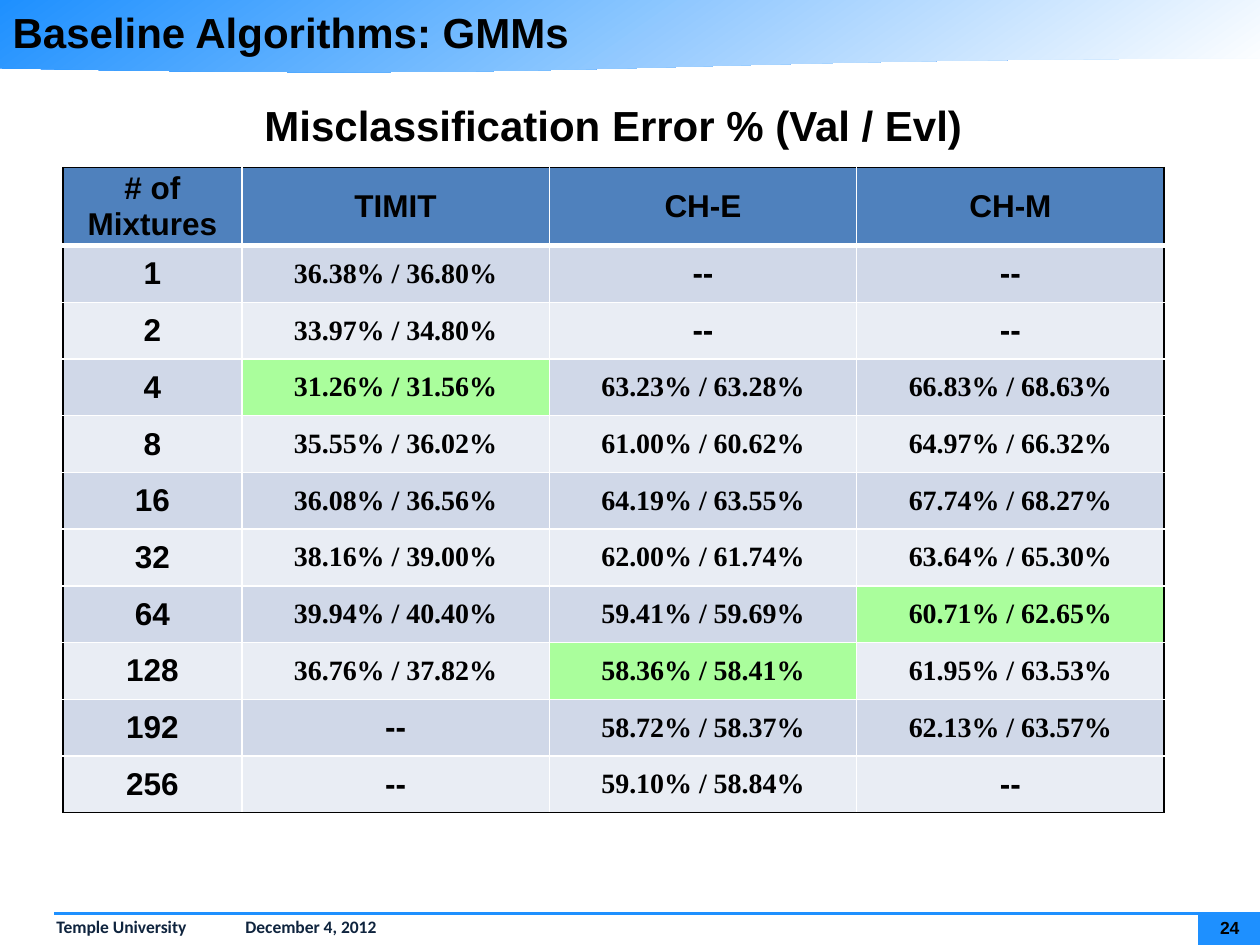
from lxml.etree import SubElement
from pptx import Presentation
from pptx.dml.color import RGBColor
from pptx.enum.shapes import MSO_CONNECTOR, MSO_SHAPE
from pptx.enum.text import MSO_ANCHOR, MSO_AUTO_SIZE, PP_ALIGN
from pptx.oxml.ns import qn
from pptx.util import Inches, Pt

COLORS = {
    "black": "000000",
    "white": "FFFFFF",
    "accent": "1E90FF",
    "footer": "0F243E",
    "header": "4F81BD",
    "band_dark": "D0D8E8",
    "band_light": "E9EDF4",
    "best": "AAFE9C",
}
HEADINGS = ["# of Mixtures", "TIMIT", "CH-E", "CH-M"]
ERRORS = [
    ["1", "36.38% / 36.80%", "--", "--"],
    ["2", "33.97% / 34.80%", "--", "--"],
    ["4", "31.26% / 31.56%", "63.23% / 63.28%", "66.83% / 68.63%"],
    ["8", "35.55% / 36.02%", "61.00% / 60.62%", "64.97% / 66.32%"],
    ["16", "36.08% / 36.56%", "64.19% / 63.55%", "67.74% / 68.27%"],
    ["32", "38.16% / 39.00%", "62.00% / 61.74%", "63.64% / 65.30%"],
    ["64", "39.94% / 40.40%", "59.41% / 59.69%", "60.71% / 62.65%"],
    ["128", "36.76% / 37.82%", "58.36% / 58.41%", "61.95% / 63.53%"],
    ["192", "--", "58.72% / 58.37%", "62.13% / 63.57%"],
    ["256", "--", "59.10% / 58.84%", "--"],
]
BEST = {"31.26% / 31.56%", "58.36% / 58.41%", "60.71% / 62.65%"}


def rgb(name):
    return RGBColor.from_string(COLORS[name])


def write(frame, text, size=24, font="Arial", color="black", align=PP_ALIGN.LEFT):
    paragraph = frame.paragraphs[0]
    paragraph.alignment = align
    run = paragraph.add_run()
    run.text = text
    run.font.size = Pt(size)
    run.font.name = font
    run.font.bold = True
    run.font.color.rgb = rgb(color)
    return paragraph


class SlideBuilder:
    def __init__(self, slide):
        self.slide = slide
        self.shapes = slide.shapes

    def block(self, kind, left, top, width, height, color):
        block = self.shapes.add_shape(
            kind, Inches(left), Inches(top), Inches(width), Inches(height))
        block.shadow.inherit = False
        block.line.fill.background()
        block.fill.solid()
        block.fill.fore_color.rgb = rgb(color)
        return block

    def banner(self):
        banner = self.block(MSO_SHAPE.FLOWCHART_DOCUMENT, 0, 0, 10.01, 0.58, "accent")
        banner.fill.gradient()
        banner.fill.gradient_angle = 305
        for stop, color, position in zip(
                banner.fill.gradient_stops, ("accent", "white"), (0, 1)):
            stop.color.rgb = rgb(color)
            stop.position = position

    def title(self, text):
        title = self.shapes.title
        title.left, title.top = Inches(0), Inches(0)
        title.width, title.height = Inches(10), Inches(0.43)
        frame = title.text_frame
        frame.auto_size = MSO_AUTO_SIZE.NONE
        frame.vertical_anchor = MSO_ANCHOR.TOP
        write(frame, text)
        self.shapes._spTree.append(title._element)  # in front of the banner

    def text(self, text, left, top, width, height, inset=None,
             anchor=MSO_ANCHOR.TOP, **style):
        box = self.shapes.add_textbox(
            Inches(left), Inches(top), Inches(width), Inches(height))
        frame = box.text_frame
        frame.word_wrap = True
        frame.vertical_anchor = anchor
        if inset is not None:
            frame.margin_left = frame.margin_right = Inches(inset)
            frame.margin_top = frame.margin_bottom = Inches(inset)
        return write(frame, text, **style)

    def rule(self, left, right, y):
        rule = self.shapes.add_connector(
            MSO_CONNECTOR.STRAIGHT, Inches(left), Inches(y), Inches(right), Inches(y))
        rule.line.color.rgb = rgb("accent")
        rule.line.width = Pt(1.5)
        SubElement(rule._element.spPr, qn("a:effectLst"))

    def borders(self, cell, edges):
        properties = cell._tc.get_or_add_tcPr()
        for side, (color, width) in edges.items():
            line = SubElement(properties, qn(f"a:ln{side}"), w=str(Pt(width)))
            fill = SubElement(line, qn("a:solidFill"))
            SubElement(fill, qn("a:srgbClr"), val=COLORS[color])

    def cell(self, cell, text, fill, edges):
        cell.margin_left = cell.margin_right = Inches(0.07)
        cell.margin_top = cell.margin_bottom = 0
        cell.vertical_anchor = MSO_ANCHOR.MIDDLE
        self.borders(cell, edges)
        cell.fill.solid()
        cell.fill.fore_color.rgb = rgb(fill)
        size, font = (16, "Times New Roman") if "%" in text else (18, "Arial")
        write(cell.text_frame, text, size=size, font=font, align=PP_ALIGN.CENTER)

    def table(self, rows, left, top, widths, heights):
        table = self.shapes.add_table(
            len(rows), len(widths), Inches(left), Inches(top),
            Inches(sum(widths)), Inches(sum(heights))).table
        for column, width in zip(table.columns, widths):
            column.width = Inches(width)
        for row, height in zip(table.rows, heights):
            row.height = Inches(height)

        outer, inner, heavy = ("black", 1), ("white", 1), ("white", 3)
        last_row, last_column = len(rows) - 1, len(widths) - 1
        for r, row in enumerate(rows):
            band = "header" if r == 0 else "band_dark" if r % 2 else "band_light"
            for c, text in enumerate(row):
                edges = {
                    "L": outer if c == 0 else inner,
                    "R": outer if c == last_column else inner,
                    "T": outer if r == 0 else heavy if r == 1 else inner,
                    "B": outer if r == last_row else heavy if r == 0 else inner,
                }
                self.cell(table.cell(r, c), text, "best" if text in BEST else band, edges)

    def footer(self, text, tab):
        paragraph = self.text(text, 0.04, 7.23, 9.97, 0.26,
                              size=10, font="Calibri", color="footer")
        paragraph.line_spacing = 0.95
        properties = paragraph._p.get_or_add_pPr()
        properties.set("marL", str(Inches(0.31)))
        properties.set("indent", "0")
        stops = SubElement(properties, qn("a:tabLst"))
        SubElement(stops, qn("a:tab"), pos=str(Inches(tab)), algn="r")


def main():
    presentation = Presentation()
    presentation.slide_width, presentation.slide_height = Inches(10), Inches(7.5)
    builder = SlideBuilder(presentation.slides.add_slide(presentation.slide_layouts[5]))

    # Banner and footer
    builder.banner()
    builder.block(MSO_SHAPE.RECTANGLE, 9.51, 7.24, 0.5, 0.26, "accent")
    builder.footer("Temple University\tDecember 4, 2012", tab=9.31)
    builder.rule(0.43, 10, 7.25)
    builder.text("24", 9.56, 7.28, 0.4, 0.17, inset=0, anchor=MSO_ANCHOR.MIDDLE,
                 size=10, align=PP_ALIGN.CENTER)

    # Title and error table
    builder.title("Baseline Algorithms: GMMs")
    builder.table([HEADINGS] + ERRORS, 0.5, 1.33,
                  widths=[1.42] + [2.44] * 3, heights=[0.62] + [0.45] * len(ERRORS))
    builder.text("Misclassification Error % (Val / Evl)", 2, 0.74, 5.75, 0.6)

    presentation.save("out.pptx")


if __name__ == "__main__":
    main()
